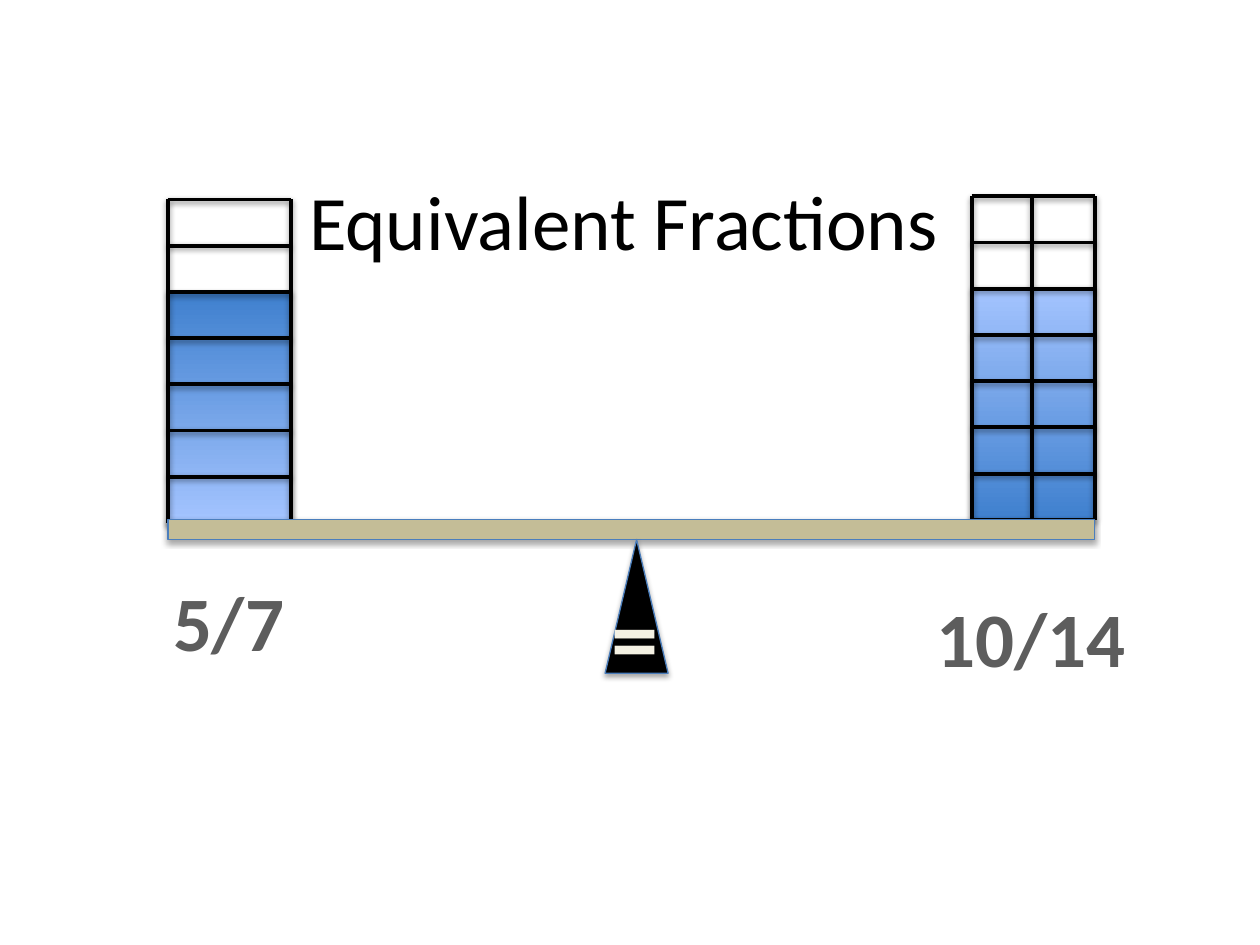
import lxml.etree
import pptx
import pptx.dml.color
import pptx.enum.shapes
import pptx.enum.text
import pptx.oxml.ns
import pptx.util

Pt = pptx.util.Pt
RGB = pptx.dml.color.RGBColor.from_string
SHAPES = pptx.enum.shapes.MSO_SHAPE
qn = pptx.oxml.ns.qn

COLORS = {
    "black": "000000",
    "dark_blue": "3F80CE",
    "light_blue": "A4C4FF",
    "outline": "4B7EBC",
    "beam": "C4BD97",
    "cream": "F4F1E3",
    "gray": "5D5D5D",
}


def add_shadow(shape, distance, opacity):
    properties = shape._element.spPr
    effects = properties.find(qn("a:effectLst"))
    if effects is None:
        effects = lxml.etree.SubElement(properties, qn("a:effectLst"))
    shadow = lxml.etree.SubElement(
        effects, qn("a:outerShdw"), blurRad=str(Pt(3.15)), dist=str(Pt(distance)),
        dir="5400000", rotWithShape="0")
    color = lxml.etree.SubElement(shadow, qn("a:srgbClr"), val=COLORS["black"])
    lxml.etree.SubElement(color, qn("a:alpha"), val=str(opacity * 1000))


def style_shape(shape, fill_color=None):
    if fill_color:
        shape.fill.solid()
        shape.fill.fore_color.rgb = RGB(COLORS[fill_color])
    shape.line.color.rgb = RGB(COLORS["outline"])
    shape.line.width = Pt(0.75)
    shape.shadow.inherit = False
    add_shadow(shape, 1.8, 35)


presentation = pptx.Presentation()
presentation.slide_width = Pt(720)
presentation.slide_height = Pt(540)
slide = presentation.slides.add_slide(presentation.slide_layouts[6])

ROWS = 7
EMPTY_ROWS = 2
ROW_HEIGHT = 26.4
COLUMN_WIDTH = 70.4
column_height = ROWS * ROW_HEIGHT

for left, top, dividers, gradient_angle in [
    (95.9, 114, [0, COLUMN_WIDTH], 270),
    (555.2, 112.2, [0, 34.5, COLUMN_WIDTH], 90),
]:
    group = slide.shapes.add_group_shape()
    filled_top = top + EMPTY_ROWS * ROW_HEIGHT
    filled_part = group.shapes.add_shape(
        SHAPES.RECTANGLE, Pt(left), Pt(filled_top), Pt(COLUMN_WIDTH),
        Pt((ROWS - EMPTY_ROWS) * ROW_HEIGHT))
    filled_part.fill.gradient()
    filled_part.fill.gradient_angle = gradient_angle
    for stop, position, color in zip(
            filled_part.fill.gradient_stops, [0, 1], ["dark_blue", "light_blue"]):
        stop.position = position
        stop.color.rgb = RGB(COLORS[color])
    style_shape(filled_part)

    right, bottom = left + COLUMN_WIDTH, top + column_height
    row_edges = [top + row * ROW_HEIGHT for row in range(ROWS + 1)]
    grid_lines = [(left, y, right, y) for y in row_edges]
    grid_lines += [(left + x, top, left + x, bottom) for x in dividers]
    for ends in grid_lines:
        grid_line = group.shapes.add_connector(
            pptx.enum.shapes.MSO_CONNECTOR.STRAIGHT, *map(Pt, ends))
        grid_line.line.color.rgb = RGB(COLORS["black"])
        grid_line.line.width = Pt(2.25)
        add_shadow(grid_line, 1.6, 38)

beam = slide.shapes.add_shape(SHAPES.RECTANGLE, Pt(96), Pt(296.8), Pt(529.4), Pt(11.5))
style_shape(beam, "beam")
fulcrum = slide.shapes.add_shape(
    SHAPES.ISOSCELES_TRIANGLE, Pt(345.8), Pt(308.3), Pt(36), Pt(76.4))
style_shape(fulcrum, "black")

for text, left, top, width, height, size, color, bold, wrap, anchor in [
    ("Equivalent Fractions", 50.4, 67.7, 612, 115.9, 44, "black", False, True, "MIDDLE"),
    ("=", 342, 326.9, 41.8, 72.7, 54, "cream", True, False, "TOP"),
    ("5/7", 73.4, 324.7, 114.5, 60.5, 44, "gray", True, True, "TOP"),
    ("10/14", 522.7, 334.1, 133.2, 60.5, 44, "gray", True, True, "TOP"),
]:
    box = slide.shapes.add_textbox(Pt(left), Pt(top), Pt(width), Pt(height))
    frame = box.text_frame
    frame.word_wrap = wrap
    frame.vertical_anchor = getattr(pptx.enum.text.MSO_ANCHOR, anchor)
    paragraph = frame.paragraphs[0]
    paragraph.text = text
    paragraph.alignment = pptx.enum.text.PP_ALIGN.CENTER
    paragraph.font.name = "Calibri"
    paragraph.font.size = Pt(size)
    paragraph.font.bold = bold
    paragraph.font.color.rgb = RGB(COLORS[color])

presentation.save("out.pptx")
